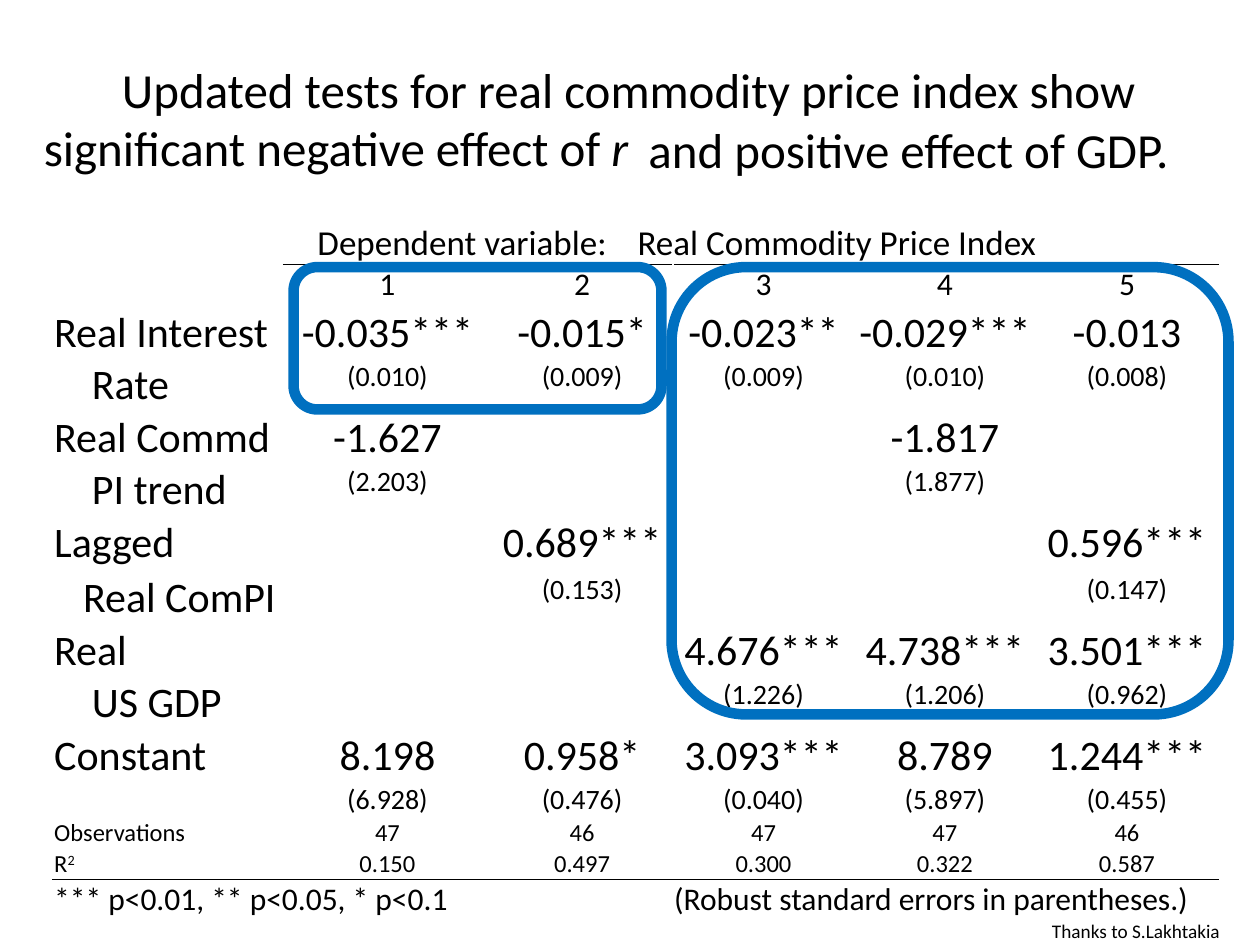
from lxml import etree
from pptx import Presentation
from pptx.dml.color import RGBColor
from pptx.enum.shapes import MSO_SHAPE
from pptx.enum.text import MSO_ANCHOR, PP_ALIGN
from pptx.oxml.ns import qn
from pptx.util import Inches, Pt

ROUND = MSO_SHAPE.ROUNDED_RECTANGLE
TOP, BOTTOM = MSO_ANCHOR.TOP, MSO_ANCHOR.BOTTOM
LEFT, CENTER = PP_ALIGN.LEFT, PP_ALIGN.CENTER
FONT, BLACK, BLUE = "Calibri", "000000", "0070C0"

WIDTHS = [1.83, 1.65, 1.44, 1.44, 1.44, 1.45]
# height, size of label, label indent, size of values, anchor of values, texts
ROWS = [
    (0.3, 20, 0, 20, BOTTOM, ["", "Dependent variable:\tReal Commodity Price Index"]),
    (0.3, 18, 0, 18, BOTTOM, ["", "1", "2", "3", "4", "5"]),
    (0.43, 24, 0, 24, BOTTOM,
     ["Real Interest", "-0.035***", "-0.015*", "-0.023**", "-0.029***", "-0.013"]),
    (0.33, 24, 0.3, 16, TOP,
     ["Rate", "(0.010)", "(0.009)", "(0.009)", "(0.010)", "(0.008)"]),
    (0.4, 24, 0, 24, BOTTOM, ["Real Commd", "-1.627", "", "", "-1.817", ""]),
    (0.27, 24, 0.3, 16, TOP, ["PI trend", "(2.203)", "", "", "(1.877)", ""]),
    (0.44, 24, 0, 24, TOP, ["Lagged", "", "0.689***", "", "", "0.596***"]),
    (0.27, 24, 0.23, 16, TOP, ["Real ComPI", "", "(0.153)", "", "", "(0.147)"]),
    (0.4, 24, 0, 24, BOTTOM, ["Real", "", "", "4.676***", "4.738***", "3.501***"]),
    (0.35, 24, 0.3, 16, TOP, ["US GDP", "", "", "(1.226)", "(1.206)", "(0.962)"]),
    (0.4, 24, 0, 24, BOTTOM,
     ["Constant", "8.198", "0.958*", "3.093***", "8.789", "1.244***"]),
    (0.27, 16, 0, 16, BOTTOM,
     ["", "(6.928)", "(0.476)", "(0.040)", "(5.897)", "(0.455)"]),
    (0.24, 14, 0, 14, BOTTOM, ["Observations", "47", "46", "47", "47", "46"]),
    (0.24, 14, 0, 14, BOTTOM, ["R", "0.150", "0.497", "0.300", "0.322", "0.587"]),
    (0.3, 18, 0, 18, BOTTOM,
     ["*** p<0.01, ** p<0.05, * p<0.1", "", "",
      "(Robust standard errors in parentheses.)"]),
]
LAST = len(ROWS) - 1
# row: (border side, first column)
RULES = {0: ("lnB", 1), 1: ("lnT", 1), LAST - 1: ("lnB", 0), LAST: ("lnT", 0)}


def color(code):
    return RGBColor.from_string(code)


def style(run, size):
    run.font.name, run.font.size = FONT, Pt(size)
    run.font.color.rgb = color(BLACK)


def add_rule(cell, side):
    line = etree.Element(qn("a:" + side), w=str(Pt(0.5)))
    fill = etree.SubElement(line, qn("a:solidFill"))
    etree.SubElement(fill, qn("a:srgbClr"), val=BLACK)
    cell._tc.get_or_add_tcPr().insert(0, line)


def fill_cell(cell, text, size, align, anchor, indent):
    cell.fill.background()
    cell.margin_left = Inches(0.01 + indent)
    cell.margin_right = cell.margin_top = Inches(0.01)
    cell.margin_bottom = 0
    cell.vertical_anchor = anchor
    para = cell.text_frame.paragraphs[0]
    para.text, para.alignment = text, align
    for run in para.runs:
        style(run, size)
    if not text:
        # keeps an empty cell from stretching its row
        para._p.get_or_add_endParaRPr().set("sz", "1000")


def add_results(slide, left, top, width, height):
    frame = slide.shapes.add_table(len(ROWS), len(WIDTHS), left, top, width, height)
    table = frame.table
    table.first_row = table.horz_banding = False
    for col, wide in zip(table.columns, WIDTHS):
        col.width = Inches(wide)
    for i, (high, head, indent, size, anchor, texts) in enumerate(ROWS):
        table.rows[i].height = Inches(high)
        for j in range(len(WIDTHS)):
            cell = table.cell(i, j)
            text = texts[j] if j < len(texts) else ""
            if j == 0:
                fill_cell(cell, text, head, LEFT, TOP if text == "Lagged" else BOTTOM,
                          indent)
            else:
                fill_cell(cell, text, size, LEFT if i == LAST else CENTER, anchor, 0)
            side, first = RULES.get(i, ("", 0))
            if side and j >= first:
                add_rule(cell, side)

    title = table.cell(0, 1)
    title.margin_left = Inches(0.27)
    para = title.text_frame.paragraphs[0]
    para.alignment = LEFT
    tabs = etree.SubElement(para._p.get_or_add_pPr(), qn("a:tabLst"))
    etree.SubElement(tabs, qn("a:tab"), pos=str(Inches(2.54)), algn="l")

    power = table.cell(LAST - 1, 0).text_frame.paragraphs[0].add_run()
    power.text = "2"
    style(power, 14)
    power.font._element.set("baseline", "30000")

    for row, start, end in ((0, 1, 5), (LAST, 0, 1), (LAST, 3, 5)):
        table.cell(row, start).merge(table.cell(row, end))


def add_text(slide, box, text, size, align=LEFT, wrap=True):
    frame = slide.shapes.add_textbox(*box).text_frame
    frame.word_wrap = wrap
    para = frame.paragraphs[0]
    para.text, para.alignment = text, align
    style(para.runs[0], size)
    return para


def add_title(slide, left, top, width, height):
    para = add_text(slide, (left, top, width, height),
                    "Updated tests for real commodity price index show "
                    "significant negative effect of ", 28)
    para._p.get_or_add_pPr().set("indent", str(Inches(0.62)))
    rate = para.add_run()
    rate.text = "r"
    style(rate, 28)
    rate.font.italic = True
    add_text(slide, (left + Inches(3.96), top + Inches(0.48), Inches(6), Inches(0.57)),
             "and positive effect of GDP.", 28, CENTER)


def add_ring(slide, left, top, width, height):
    ring = slide.shapes.add_shape(ROUND, left, top, width, height)
    ring.shadow.inherit = False
    ring.fill.background()
    ring.line.color.rgb = color(BLUE)
    ring.line.width = Pt(6)


def main():
    deck = Presentation()
    deck.slide_width, deck.slide_height = Inches(10), Inches(7.5)
    slide = deck.slides.add_slide(deck.slide_layouts[6])
    add_results(slide, Inches(0.42), Inches(1.75), Inches(9.25), Inches(5.47))
    thanks = Inches(8.25), Inches(7.25), Inches(1.58), Inches(0.29)
    add_text(slide, thanks, "Thanks to S.Lakhtakia", 11, wrap=False)
    add_title(slide, Inches(0.25), Inches(0.42), Inches(9.33), Inches(1.04))
    for left, width, height in ((2.33, 2.92, 1.13), (5.33, 4.42, 3.55)):
        add_ring(slide, Inches(left), Inches(2.12), Inches(width), Inches(height))
    deck.save("out.pptx")


if __name__ == "__main__":
    main()
